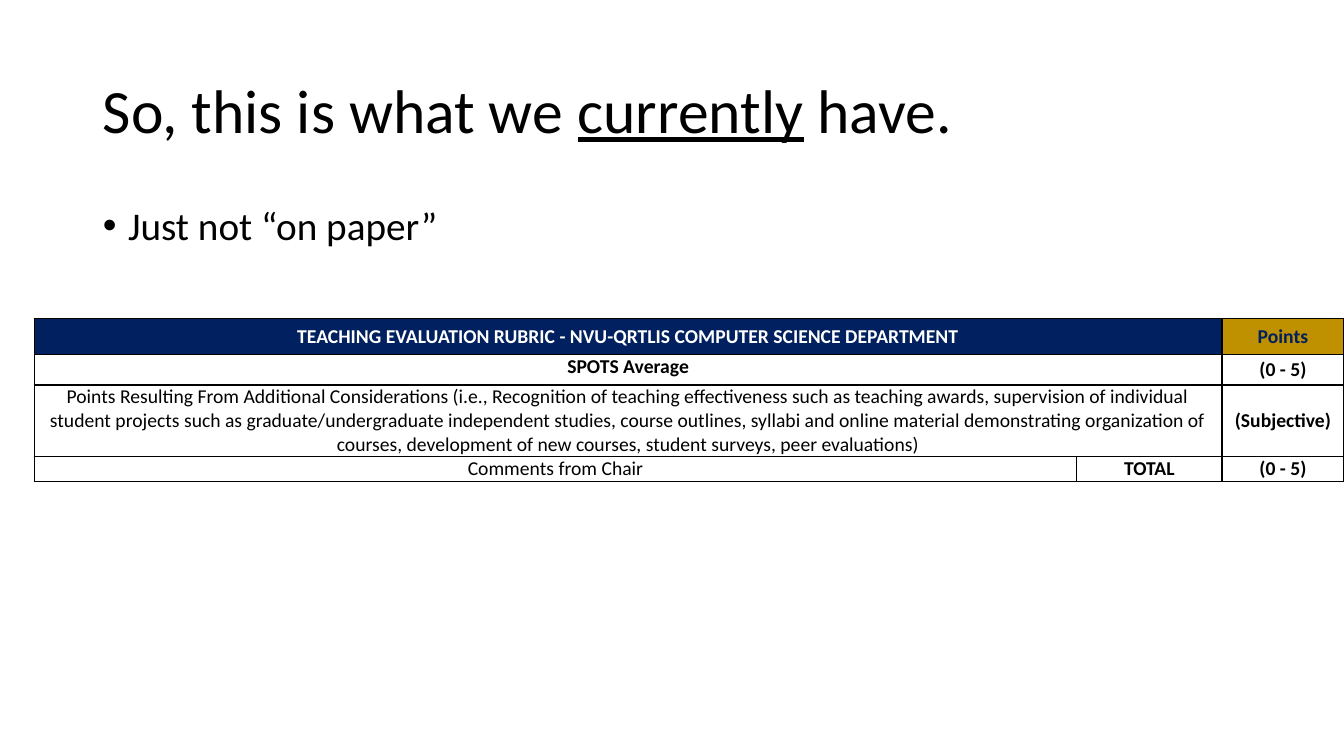
"""Build the slide that shows the current teaching evaluation rubric."""
from dataclasses import dataclass

from pptx import Presentation
from pptx import util as u
from pptx.dml.color import RGBColor
from pptx.enum import text
from pptx.oxml.ns import qn
from lxml import etree

FONT = "Calibri"
BLACK, WHITE, NAVY, GOLD = "000000", "FFFFFF", "002060", "BF9000"
COLUMN_WIDTHS = (10.34, 1.44, 1.21)
ROW_HEIGHTS = (0.36, 0.3, 0.71, 0.25)
MIDDLE, TOP = text.MSO_ANCHOR.MIDDLE, text.MSO_ANCHOR.TOP


@dataclass(frozen=True)
class RubricCell:
    row: int
    col: int
    label: str
    span: int = 1
    bold: bool = True
    anchor: text.MSO_ANCHOR = MIDDLE
    color: str = BLACK
    fill: str = WHITE


CELLS = (
    RubricCell(0, 0, "TEACHING EVALUATION RUBRIC - NVU-QRTLIS COMPUTER SCIENCE DEPARTMENT",
               span=2, color=WHITE, fill=NAVY),
    RubricCell(0, 2, "Points", color=NAVY, fill=GOLD),
    RubricCell(1, 0, "SPOTS Average", span=2, anchor=TOP),
    RubricCell(1, 2, "(0 - 5)"),
    RubricCell(2, 0, "Points Resulting From Additional Considerations (i.e., Recognition of "
               "teaching effectiveness such as teaching awards, supervision of individual "
               "student projects such as graduate/undergraduate independent studies, course "
               "outlines, syllabi and online material demonstrating organization of courses, "
               "development of new courses, student surveys, peer evaluations)",
               span=2, bold=False, anchor=TOP),
    RubricCell(2, 2, "(Subjective)"),
    RubricCell(3, 0, "Comments from Chair", bold=False, anchor=TOP),
    RubricCell(3, 1, "TOTAL"),
    RubricCell(3, 2, "(0 - 5)"),
)


def rgb(value: str) -> RGBColor:
    return RGBColor.from_string(value)


def set_font(font, size: float, color: str = BLACK, bold: bool = False) -> None:
    font.name, font.size, font.bold = FONT, u.Pt(size), bold
    font.color.rgb = rgb(color)


def place(sp, left: float, top: float, width: float, height: float) -> None:
    sp.left, sp.top = u.Inches(left), u.Inches(top)
    sp.width, sp.height = u.Inches(width), u.Inches(height)


def add_title(slide) -> None:
    sp = slide.shapes.title
    place(sp, 0.92, 0.4, 11.5, 1.45)
    tf = sp.text_frame
    tf.auto_size, tf.vertical_anchor = text.MSO_AUTO_SIZE.NONE, MIDDLE
    p = tf.paragraphs[0]
    p.alignment, p.line_spacing = text.PP_ALIGN.LEFT, 0.9
    set_font(p.font, 44)
    for words, underlined in (("So, this is what we ", False), ("currently", True),
                              (" have.", False)):
        r = p.add_run()
        r.text, r.font.underline = words, underlined


def add_body(slide) -> None:
    sp = slide.placeholders[1]
    place(sp, 0.92, 2, 11.5, 4.76)
    tf = sp.text_frame
    tf.auto_size = text.MSO_AUTO_SIZE.NONE
    p = tf.paragraphs[0]
    p.text = "Just not “on paper”"
    p.line_spacing, p.space_before = 0.9, u.Pt(10)
    set_font(p.font, 28)
    pPr = p._p.get_or_add_pPr()
    pPr.set("marL", str(u.Inches(0.25)))
    pPr.set("indent", str(u.Inches(-0.25)))
    bullet_font = etree.Element(qn("a:buFont"), typeface="Arial")
    bullet = etree.Element(qn("a:buChar"), char="•")
    pPr.find(qn("a:defRPr")).addprevious(bullet_font)
    bullet_font.addnext(bullet)


def add_borders(cell) -> None:
    tcPr = cell._tc.get_or_add_tcPr()
    for index, side in enumerate(("lnL", "lnR", "lnT", "lnB")):
        line = etree.Element(qn(f"a:{side}"), w=str(u.Pt(1)))
        fill = etree.SubElement(line, qn("a:solidFill"))
        etree.SubElement(fill, qn("a:srgbClr"), val=BLACK)
        tcPr.insert(index, line)


def fill_cell(table, item: RubricCell) -> None:
    cell = table.cell(item.row, item.col)
    if item.span > 1:
        cell.merge(table.cell(item.row, item.col + item.span - 1))
    cell.margin_left = cell.margin_right = cell.margin_top = cell.margin_bottom = 0
    cell.vertical_anchor = item.anchor
    cell.fill.solid()
    cell.fill.fore_color.rgb = rgb(item.fill)
    p = cell.text_frame.paragraphs[0]
    p.text, p.alignment = item.label, text.PP_ALIGN.CENTER
    set_font(p.font, 14, item.color, item.bold)


def add_rubric(slide) -> None:
    frame = slide.shapes.add_table(
        len(ROW_HEIGHTS), len(COLUMN_WIDTHS), u.Inches(0.34), u.Inches(3.16),
        u.Inches(sum(COLUMN_WIDTHS)), u.Inches(sum(ROW_HEIGHTS)))
    table = frame.table
    table.first_row = table.horz_banding = False
    for column, width in zip(table.columns, COLUMN_WIDTHS):
        column.width = u.Inches(width)
    for row, height in zip(table.rows, ROW_HEIGHTS):
        row.height = u.Inches(height)
    for item in CELLS:
        fill_cell(table, item)
    for cell in table.iter_cells():
        cell.margin_top = cell.margin_bottom = 0
        set_font(cell.text_frame.paragraphs[0].font, 14) if cell.is_spanned else None
        add_borders(cell)


def main() -> None:
    prs = Presentation()
    prs.slide_width, prs.slide_height = u.Inches(13.33), u.Inches(7.5)
    slide = prs.slides.add_slide(prs.slide_layouts[1])
    add_title(slide)
    add_body(slide)
    add_rubric(slide)
    prs.save("out.pptx")


if __name__ == "__main__":
    main()
